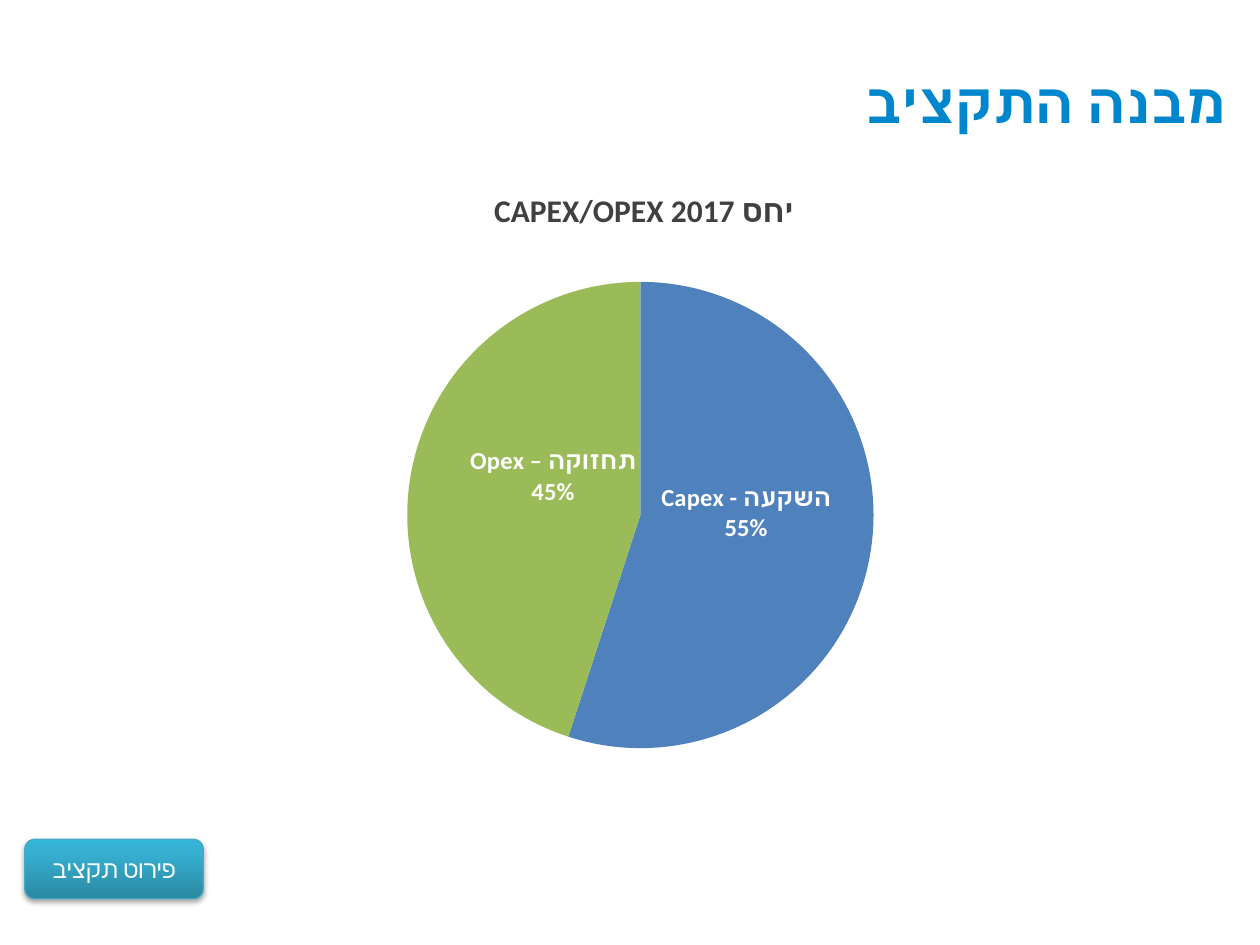
import pptx
import pptx.chart.data
import pptx.dml.color
import pptx.enum.chart
import pptx.enum.shapes
import pptx.enum.text
import pptx.oxml
import pptx.oxml.ns
import pptx.util

Cm = pptx.util.Cm
Pt = pptx.util.Pt
RGB = pptx.dml.color.RGBColor
ALIGN = pptx.enum.text.PP_ALIGN
ANCHOR = pptx.enum.text.MSO_ANCHOR
qn = pptx.oxml.ns.qn

WHITE = RGB(0xFF, 0xFF, 0xFF)
SKY = RGB(0x00, 0x86, 0xCD)
GREY = RGB(0x40, 0x40, 0x40)
BLUE = RGB(0x4F, 0x81, 0xBD)
GREEN = RGB(0x9B, 0xBB, 0x59)
TEAL = RGB(0x46, 0xAA, 0xC5)
BLACK = RGB(0x00, 0x00, 0x00)
GLOSS = ((0, RGB(0x2A, 0x88, 0xA2)), (80, RGB(0x37, 0xB1, 0xD2)), (100, RGB(0x34, 0xB4, 0xD6)))


def make(tag, attrs="", inner=""):
    space = pptx.oxml.ns.nsdecls("a", "c")
    return pptx.oxml.parse_xml(f"<{tag} {space} {attrs}>{inner}</{tag}>")


def layout(**parts):
    inner = "".join(f'<c:{key} val="{val}"/>' for key, val in parts.items())
    return make("c:layout", "", f"<c:manualLayout>{inner}</c:manualLayout>")


class Deck:
    """Hold the text styles and the current slide, and draw elements on it."""

    styles = {
        "title": {"name": "Roboto", "size": Pt(32), "bold": True, "color": SKY},
        "head": {"name": "Calibri", "size": Pt(18), "bold": True, "color": GREY},
        "label": {"name": "Calibri", "size": Pt(14), "bold": True, "color": WHITE},
        "button": {"name": "Calibri", "size": Pt(14), "bold": False, "color": WHITE},
        "chart": {"name": "Calibri", "size": Pt(10), "bold": False, "color": BLACK},
    }

    def __init__(self, wide, high):
        self.show = pptx.Presentation()
        self.show.slide_width, self.show.slide_height = wide, high
        self.slide = self.show.slides.add_slide(self.show.slide_layouts[6])

    def style(self, font, name):
        for key, val in self.styles[name].items():
            if key == "color":
                font.color.rgb = val
            else:
                setattr(font, key, val)

    def fill_text(self, shape, text, name, align, anchor):
        frame = shape.text_frame
        frame.word_wrap = True
        frame.vertical_anchor = anchor
        para = frame.paragraphs[0]
        para.alignment = align
        para._p.get_or_add_pPr().set("rtl", "1")
        run = para.add_run()
        run.text = text
        self.style(run.font, name)
        face = self.styles[name]["name"]
        run._r.get_or_add_rPr().append(make("a:cs", f'typeface="{face}"'))
        return frame

    def text(self, box, text, name, align, inset=None):
        shape = self.slide.shapes.add_textbox(*map(Cm, box))
        frame = self.fill_text(shape, text, name, align, ANCHOR.TOP)
        if inset is not None:
            for side in ("left", "top", "right", "bottom"):
                setattr(frame, f"margin_{side}", Cm(inset))

    def button(self, box, text):
        kind = pptx.enum.shapes.MSO_SHAPE.ROUNDED_RECTANGLE
        shape = self.slide.shapes.add_shape(kind, *map(Cm, box))
        shape.fill.gradient()
        shape.fill.gradient_angle = 90
        props = shape._element.spPr
        stops = props.find(qn("a:gradFill")).find(qn("a:gsLst"))
        for old in list(stops):
            stops.remove(old)
        for pos, tone in GLOSS:
            stops.append(make("a:gs", f'pos="{pos * 1000}"', f'<a:srgbClr val="{tone}"/>'))
        shape.line.color.rgb = TEAL
        shape.line.width = Pt(0.75)
        shape.shadow.inherit = False
        blur, dist = int(Pt(3.1)), int(Pt(1.8))
        props.find(qn("a:effectLst")).append(make(
            "a:outerShdw", f'blurRad="{blur}" dist="{dist}" dir="5400000" rotWithShape="0"',
            f'<a:srgbClr val="{BLACK}"><a:alpha val="35000"/></a:srgbClr>'))
        self.fill_text(shape, text, "button", ALIGN.CENTER, ANCHOR.MIDDLE)

    def pie(self, box, parts, plot):
        data = pptx.chart.data.CategoryChartData(number_format="#,##0.00")
        data.categories = [part[0] for part in parts]
        data.add_series("Series 1", [part[1] for part in parts])
        kind = pptx.enum.chart.XL_CHART_TYPE.PIE
        chart = self.slide.shapes.add_chart(kind, *map(Cm, box), data).chart
        chart.has_legend = chart.has_title = False
        self.style(chart.font, "chart")
        area = chart._chartSpace.chart.plotArea
        for old in area.findall(qn("c:layout")):
            area.remove(old)
        area.insert(0, layout(layoutTarget="inner", xMode="edge", yMode="edge", **plot))
        chart.plots[0].vary_by_categories = True
        points = chart.plots[0].series[0].points
        for spot, (_, _, tone, shift) in enumerate(parts):
            fill = points[spot].format.fill
            fill.solid()
            fill.fore_color.rgb = tone
            self.label(points[spot].data_label, shift)

    def label(self, label, shift):
        self.style(label.font, "label")
        label.position = pptx.enum.chart.XL_LABEL_POSITION.CENTER
        node = label._get_or_add_dLbl()
        for key, val in {"showVal": "0", "showCatName": "1", "showPercent": "1"}.items():
            node.find(qn(f"c:{key}")).set("val", val)
        node.insert(1, layout(x=shift[0], y=shift[1]))
        node.insert(2, make("c:numFmt", 'formatCode="0%" sourceLinked="0"'))
        node.append(make("c:separator", "", "\n"))


def main():
    deck = Deck(Cm(25.4), Cm(19.05))
    parts = [
        ("Capex - השקעה", 55, BLUE, (-0.01, -0.04)),
        ("Opex – תחזוקה", 45, GREEN, (0.03, -0.04)),
    ]
    deck.pie((3.51, 5.33, 18.8, 10.21), parts, {"x": 0.25, "y": 0.03, "w": 0.5, "h": 0.93})
    deck.text((1.3, 1.37, 23.42, 1.9), "מבנה התקציב", "title", ALIGN.RIGHT, 0)
    deck.text((1.27, 3.73, 23.42, 1.4), "יחס 2017 CAPEX/OPEX", "head", ALIGN.CENTER)
    deck.button((0.5, 16.92, 3.6, 1.2), "פירוט תקציב")
    deck.show.save("out.pptx")


if __name__ == "__main__":
    main()
